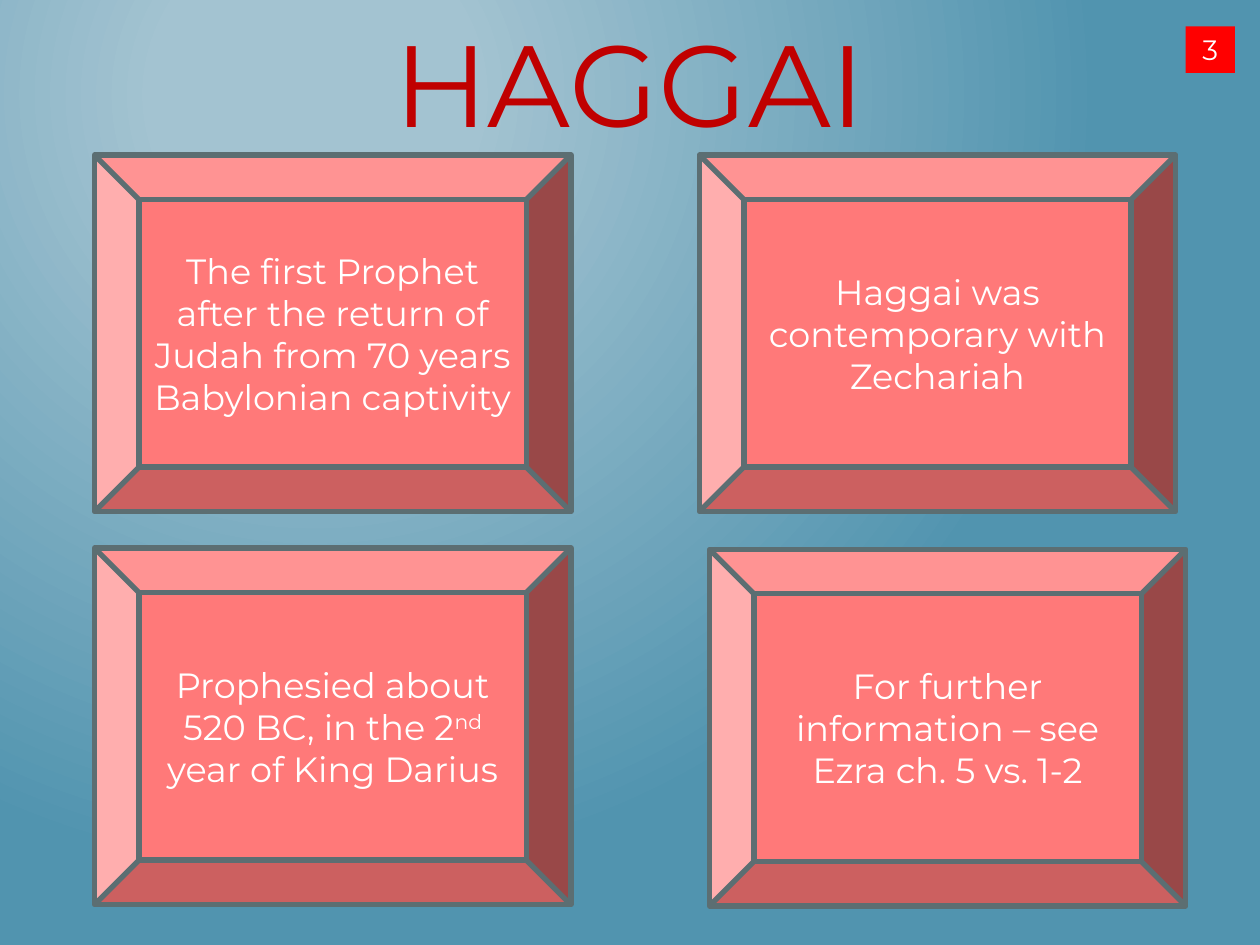
from lxml.etree import SubElement
from pptx import Presentation
from pptx.dml.color import RGBColor
from pptx.enum.shapes import MSO_SHAPE as SHAPE
from pptx.enum.text import MSO_ANCHOR as ANCHOR, MSO_AUTO_SIZE as AUTO_SIZE, PP_ALIGN as ALIGN
from pptx.oxml.ns import qn
from pptx.util import Pt

WHITE = RGBColor(0xFF, 0xFF, 0xFF)
RED = RGBColor(0xFF, 0x00, 0x00)
DARK_RED = RGBColor(0xC0, 0x00, 0x00)
CORAL = RGBColor(0xFF, 0x79, 0x79)
SLATE = RGBColor(0x5C, 0x6E, 0x72)
PALE_BLUE = RGBColor(0xA3, 0xC3, 0xD1)
DEEP_BLUE = RGBColor(0x51, 0x94, 0xAF)

TYPEFACE = "Montserrat"
FACT_SIZE = (272.2, 203.8)
FACTS = [
    ((54, 88.6), ["The first Prophet after the return of Judah from 70 years Babylonian captivity"]),
    ((399.6, 88.6), ["Haggai was contemporary with Zechariah"]),
    ((54, 313.2), ["Prophesied about 520 BC, in the 2", "nd", " year of King Darius"]),
    ((405.4, 313.9), ["For further information – see Ezra ch. 5 vs. 1-2"]),
]


def apply_format(target, values):
    for attribute, value in values.items():
        setattr(target, attribute, value)


def write_text(holder, pieces, size, color, frame_format):
    frame = holder.text_frame
    apply_format(frame, {"word_wrap": True, **frame_format})
    line = frame.paragraphs[0]
    line.alignment = ALIGN.CENTER
    for position, piece in enumerate(pieces):
        run = line.add_run()
        run.text = piece
        apply_format(run.font, {"name": TYPEFACE, "size": Pt(size)})
        run.font.color.rgb = color
        if position % 2:
            run._r.get_or_add_rPr().set("baseline", "30000")


def add_filled_shape(slide, kind, box, color):
    shape = slide.shapes.add_shape(kind, *map(Pt, box))
    shape.shadow.inherit = False
    shape.fill.solid()
    shape.fill.fore_color.rgb = color
    return shape


def paint_background(slide):
    fill = slide.background.fill
    fill.gradient()
    for stop, color, position in zip(fill.gradient_stops, (PALE_BLUE, DEEP_BLUE), (0.2, 1)):
        stop.color.rgb = color
        stop.position = position
    gradient = slide._element.find(".//" + qn("a:gradFill"))
    gradient.remove(gradient.find(qn("a:lin")))
    circle = SubElement(gradient, qn("a:path"), path="circle")
    SubElement(circle, qn("a:fillToRect"), l="50000", t="20000", r="100000", b="100000")


def add_fact(slide, box, pieces):
    panel = add_filled_shape(slide, SHAPE.BEVEL, box, CORAL)
    panel.line.color.rgb = SLATE
    panel.line.width = Pt(3.03)
    write_text(panel, pieces, 20, WHITE, {"vertical_anchor": ANCHOR.MIDDLE})


def add_page_number(slide, box, number):
    badge = add_filled_shape(slide, SHAPE.RECTANGLE, box, RED)
    badge.line.fill.background()
    write_text(badge, [number], 16, WHITE,
               {"vertical_anchor": ANCHOR.TOP, "auto_size": AUTO_SIZE.SHAPE_TO_FIT_TEXT})


def add_title(slide, box, title):
    heading = slide.shapes.add_textbox(*map(Pt, box))
    write_text(heading, [title], 66, DARK_RED, {"auto_size": AUTO_SIZE.SHAPE_TO_FIT_TEXT})


def main():
    deck = Presentation()
    apply_format(deck, {"slide_width": Pt(720), "slide_height": Pt(540)})
    slide = deck.slides.add_slide(deck.slide_layouts[6])
    paint_background(slide)
    for corner, pieces in FACTS:
        add_fact(slide, corner + FACT_SIZE, pieces)
    add_page_number(slide, (677.5, 15.1, 28.1, 26.6), "3")
    add_title(slide, (0, 3.6, 720, 87.1), "HAGGAI")
    deck.save("out.pptx")


if __name__ == "__main__":
    main()
